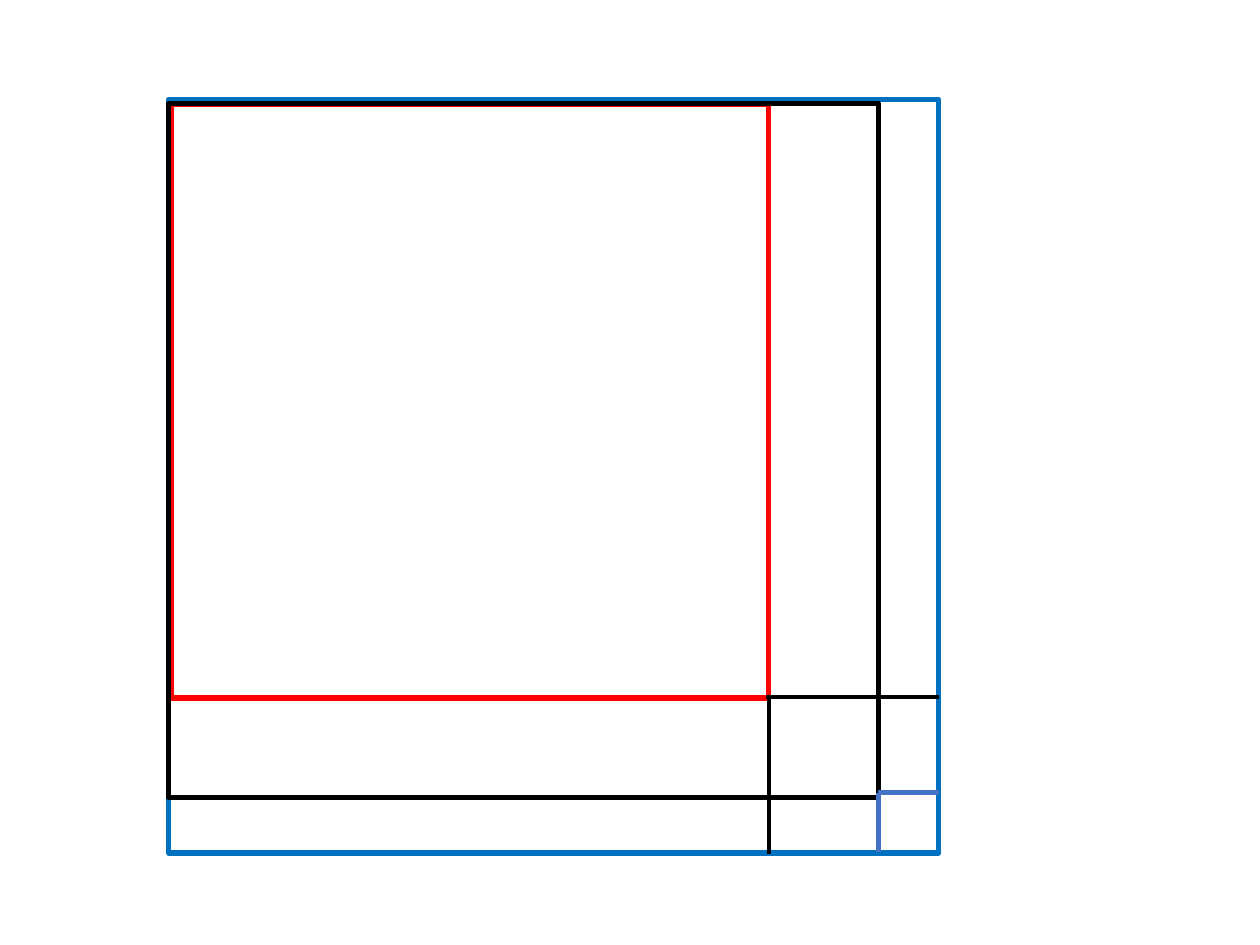
from dataclasses import dataclass

from lxml import etree
from pptx import Presentation
from pptx import util as u
from pptx.dml.color import RGBColor
from pptx.enum import shapes
from pptx.oxml import ns


@dataclass(frozen=True)
class Theme:
    """Colours and line weights of the slide."""
    paper: str = "FFFFFF"
    outer: str = "0070C0"
    inner: str = "FF0000"
    ink: str = "000000"
    corner: str = "4472C4"
    thick: float = 3
    thin: float = 2.25


class Canvas:
    """Draws styled elements on the current slide."""

    def __init__(self, slide, theme):
        self.slide = slide
        self.theme = theme

    def stroke(self, sp, color, weight):
        """Set the line colour and weight of a shape."""
        sp.line.color.rgb = RGBColor.from_string(color)
        sp.line.width = u.Pt(weight)

    def square(self, left, top, width, height, color, fill=None):
        """Add an outlined rectangle, filled on request."""
        sp = self.slide.shapes.add_shape(
            shapes.MSO_SHAPE.RECTANGLE,
            *map(u.Inches, (left, top, width, height)))
        sp.shadow.inherit = False
        if fill:
            sp.fill.solid()
            sp.fill.fore_color.rgb = RGBColor.from_string(fill)
        else:
            sp.fill.background()
        self.stroke(sp, color, self.theme.thick)

    def line(self, x1, y1, x2, y2, color, weight):
        """Add a straight line without a shadow."""
        sp = self.slide.shapes.add_connector(
            shapes.MSO_CONNECTOR.STRAIGHT,
            *map(u.Inches, (x1, y1, x2, y2)))
        self.stroke(sp, color, weight)
        etree.SubElement(sp._element.spPr, ns.qn("a:effectLst"))


def main():
    """Build the nested squares and save the deck."""
    prs = Presentation()
    prs.slide_width, prs.slide_height = u.Inches(10), u.Inches(7.5)
    theme = Theme()
    s = prs.slides.add_slide(prs.slide_layouts[6])
    canvas = Canvas(s, theme)

    canvas.square(1.34, 0.79, 6.11, 5.98, theme.outer, theme.paper)
    canvas.square(1.36, 0.83, 4.74, 4.71, theme.inner)
    canvas.square(1.34, 0.82, 5.63, 5.51, theme.ink)

    right = 7.45
    inner_x, inner_y = 6.1, 5.53
    corner_x, corner_y = 6.97, 6.29
    canvas.line(6.08, inner_y, right, inner_y, theme.ink, theme.thin)
    canvas.line(inner_x, inner_y, inner_x, 6.78, theme.ink, theme.thin)
    canvas.line(corner_x, corner_y, right, corner_y, theme.corner, theme.thick)
    canvas.line(corner_x, corner_y, corner_x, 6.76, theme.corner, theme.thick)

    prs.save("out.pptx")


if __name__ == "__main__":
    main()
